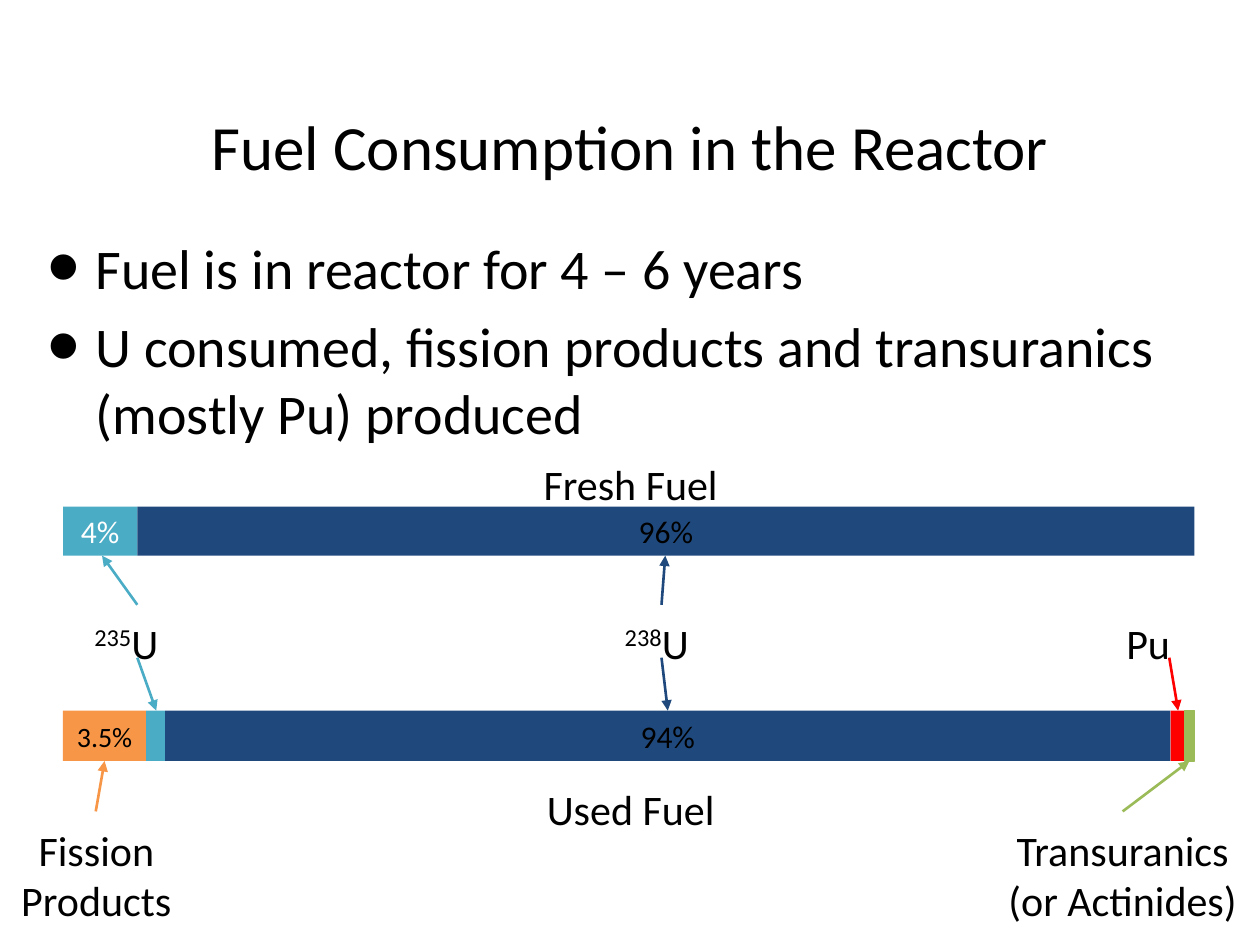
from lxml import etree
from pptx import Presentation
from pptx import util as u
from pptx.dml.color import RGBColor
from pptx.enum import shapes, text
from pptx.oxml.ns import qn

BLACK = RGBColor(0x00, 0x00, 0x00)
WHITE = RGBColor(0xFF, 0xFF, 0xFF)
TEAL = RGBColor(0x4B, 0xAC, 0xC6)
NAVY = RGBColor(0x1F, 0x49, 0x7D)
ORANGE = RGBColor(0xF7, 0x96, 0x46)
RED = RGBColor(0xFF, 0x00, 0x00)
GREEN = RGBColor(0x9B, 0xBB, 0x59)

FRESH_TOP, FRESH_HEIGHT = 4.02, 0.39
USED_TOP, USED_HEIGHT = 5.64, 0.4
FRESH_BOTTOM = FRESH_TOP + FRESH_HEIGHT
USED_BOTTOM = USED_TOP + USED_HEIGHT
LABEL_TOP, LABEL_BOTTOM, FOOT_TOP = 4.8, 5.22, 6.44
LEFT = text.PP_ALIGN.LEFT
CENTER = text.PP_ALIGN.CENTER


def inches(*lengths):
    return [u.Inches(length) for length in lengths]


def write(shape, content, size=24, color=BLACK, align=CENTER,
          anchor=text.MSO_ANCHOR.TOP, margin=0.1, wrap=True, superscript=""):
    frame = shape.text_frame
    frame.word_wrap = wrap
    frame.auto_size = text.MSO_AUTO_SIZE.NONE
    frame.vertical_anchor = anchor
    frame.margin_left = frame.margin_right = u.Inches(margin)
    frame.margin_top = frame.margin_bottom = u.Inches(0.1)
    for index, line in enumerate(content.split("\n")):
        para = frame.add_paragraph() if index else frame.paragraphs[0]
        para.alignment = align
        for part in filter(None, (superscript, line)):
            span = para.add_run()
            span.text = part
            span.font.name = "Calibri"
            span.font.size = u.Pt(size)
            span.font.color.rgb = color
            if part == superscript:
                span.font._element.set("baseline", "30000")


def add_title(page, content):
    title = page.shapes.title
    title.left, title.top, title.width, title.height = inches(0.5, 0.3, 9, 1.25)
    write(title, content, size=36, anchor=text.MSO_ANCHOR.BOTTOM)


def add_label(page, content, left, top, width, height=0.41, **style):
    box = page.shapes.add_textbox(*inches(left, top, width, height))
    write(box, content, **style)
    return box


def add_bullets(page, content):
    box = add_label(page, content, 0.28, 1.75, 9.72, 1.8, size=32, align=LEFT)
    for para in box.text_frame.paragraphs:
        para.space_before = u.Pt(6.4)
        properties = para._p.get_or_add_pPr()
        properties.set("marL", str(u.Inches(0.38)))
        properties.set("indent", str(u.Inches(-0.38)))
        for tag, name, value in (("a:buSzPct", "val", "167000"),
                                 ("a:buFont", "typeface", "Arial"),
                                 ("a:buChar", "char", "•")):
            etree.SubElement(properties, qn(tag)).set(name, value)


def add_bar(page, top, height, left, segments):
    for width, color, content, style in segments:
        bar = page.shapes.add_shape(shapes.MSO_SHAPE.RECTANGLE,
                                    *inches(left, top, width, height))
        bar.shadow.inherit = False
        bar.fill.solid()
        bar.fill.fore_color.rgb = color
        if color == GREEN:
            bar.line.color.rgb = color
            bar.line.width = u.Pt(0.75)
        else:
            bar.line.fill.background()
        if content:
            write(bar, content, anchor=text.MSO_ANCHOR.MIDDLE, **style)
        left += width


def add_arrow(page, color, start, end):
    arrow = page.shapes.add_connector(shapes.MSO_CONNECTOR.STRAIGHT,
                                      *inches(*start, *end))
    arrow.line.color.rgb = color
    arrow.line.width = u.Pt(1.5)
    line = arrow.line._get_or_add_ln()
    etree.SubElement(line, qn("a:tailEnd")).set("type", "triangle")
    etree.SubElement(arrow._element.spPr, qn("a:effectLst"))


def main():
    deck = Presentation()
    deck.slide_width, deck.slide_height = inches(10, 7.5)
    page = deck.slides.add_slide(deck.slide_layouts[5])

    add_title(page, "Fuel Consumption in the Reactor")
    add_bullets(page, "Fuel is in reactor for 4 – 6 years\n"
                      "U consumed, fission products and transuranics (mostly Pu) produced")

    add_bar(page, FRESH_TOP, FRESH_HEIGHT, 0.5, [
        (0.59, TEAL, "4%", dict(size=18, color=WHITE)),
        (8.39, NAVY, "96%", dict(size=18)),
    ])
    add_bar(page, USED_TOP, USED_HEIGHT, 0.5, [
        (0.66, ORANGE, "3.5%", dict(size=16, margin=0, wrap=False)),
        (0.15, TEAL, "", {}),
        (7.98, NAVY, "94%", dict(size=18)),
        (0.11, RED, "", {}),
        (0.08, GREEN, "", {}),
    ])

    add_label(page, "U", 0.65, LABEL_TOP, 0.88, align=LEFT, superscript="235")
    add_label(page, "U", 4.86, LABEL_TOP, 0.78, align=LEFT, superscript="238")
    add_label(page, "Pu", 8.84, LABEL_TOP, 0.89, align=LEFT)
    add_label(page, "Fission\nProducts", 0, FOOT_TOP, 1.53, 0.82)
    add_label(page, "Transuranics\n(or Actinides)", 7.75, FOOT_TOP, 2.32, 0.82)
    add_label(page, "Fresh Fuel", 4.01, 3.54, 1.99)
    add_label(page, "Used Fuel", 4.01, 6.12, 1.99)

    for color, x, fresh_x in ((TEAL, 1.09, 0.81), (NAVY, 5.25, 5.28)):
        add_arrow(page, color, (x, LABEL_TOP), (fresh_x, FRESH_BOTTOM))
    for color, x, used_x in ((TEAL, 1.09, 1.24), (NAVY, 5.25, 5.3), (RED, 9.28, 9.35)):
        add_arrow(page, color, (x, LABEL_BOTTOM), (used_x, USED_TOP))
    for color, x, used_x in ((ORANGE, 0.76, 0.83), (GREEN, 8.91, 9.44)):
        add_arrow(page, color, (x, FOOT_TOP), (used_x, USED_BOTTOM))

    deck.save("out.pptx")


if __name__ == "__main__":
    main()
